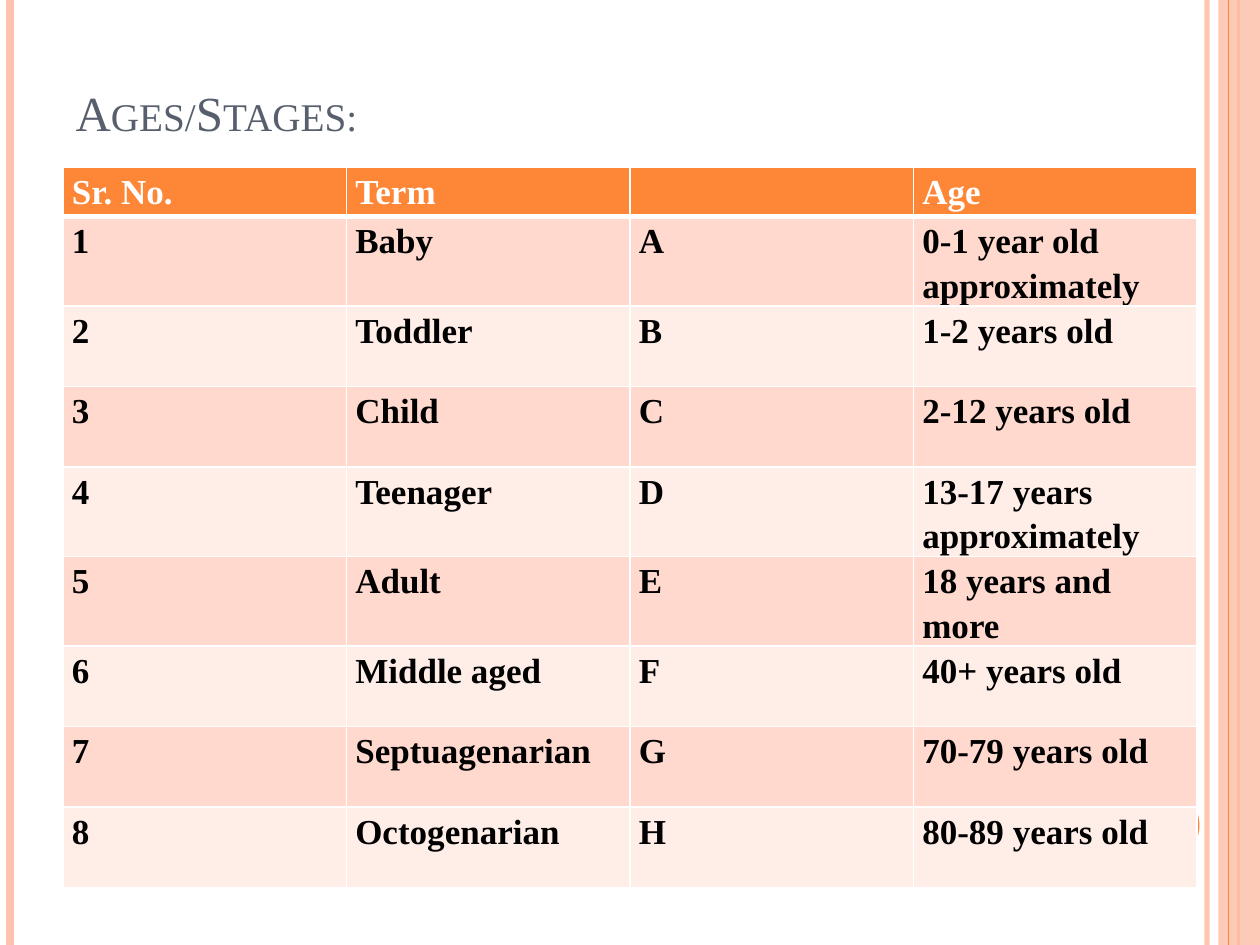
from lxml.etree import SubElement
from pptx import Presentation
from pptx.dml.color import RGBColor
from pptx.enum.shapes import MSO_CONNECTOR, MSO_SHAPE
from pptx.enum.text import MSO_ANCHOR, MSO_AUTO_SIZE, PP_ALIGN
from pptx.oxml.ns import qn
from pptx.util import Inches, Pt

COLORS = {
    "orange": "FE8637",
    "peach": "FEC3AE",
    "title": "575F6D",
    "white": "FFFFFF",
    "black": "000000",
    "band_dark": "FFD9CE",
    "band_light": "FFEDE8",
}
FONT = "Times New Roman"
HEADERS = ["Sr. No.", "Term", "", "Age"]
STAGES = [
    ("Baby", "0-1 year old approximately"),
    ("Toddler", "1-2 years old"),
    ("Child", "2-12 years old"),
    ("Teenager", "13-17 years  approximately"),
    ("Adult", "18 years and more"),
    ("Middle aged", "40+ years old"),
    ("Septuagenarian", "70-79 years old"),
    ("Octogenarian", "80-89 years old"),
]


def rgb(name):
    return RGBColor.from_string(COLORS[name])


def set_opacity(element, percent):
    color = next(element.iter(qn("a:srgbClr")))
    SubElement(color, qn("a:alpha")).set("val", str(percent * 1000))


def write_text(text_frame, text, size, color, bold=False, small_caps=False, line_spacing=None):
    paragraph = text_frame.paragraphs[0]
    paragraph.alignment = PP_ALIGN.LEFT
    paragraph.line_spacing = line_spacing
    if not text:
        return
    run = paragraph.add_run()
    run.text = text
    run.font.name = FONT
    run.font.size = Pt(size)
    run.font.bold = bold
    run.font.color.rgb = rgb(color)
    if small_caps:
        run.font._element.set("cap", "small")


def add_vertical_line(slide, left, width, color, opacity=100):
    line = slide.shapes.add_connector(
        MSO_CONNECTOR.STRAIGHT, Inches(left), 0, Inches(left), Inches(7.5)
    )
    line.line.width = Pt(width)
    line.line.color.rgb = rgb(color)
    properties = line._element.spPr
    if opacity < 100:
        set_opacity(properties, opacity)
    SubElement(properties, qn("a:effectLst"))


def add_filled_shape(slide, kind, left, top, width, height, color, opacity=100):
    shape = slide.shapes.add_shape(
        kind, Inches(left), Inches(top), Inches(width), Inches(height)
    )
    shape.shadow.inherit = False
    shape.fill.solid()
    shape.fill.fore_color.rgb = rgb(color)
    shape.line.fill.background()
    if opacity < 100:
        set_opacity(shape._element.spPr, opacity)


def add_decoration(slide):
    add_vertical_line(slide, 9.58, 3, "peach", opacity=93)
    add_vertical_line(slide, 0.08, 4.5, "peach")
    add_vertical_line(slide, 9.83, 1.5, "orange")
    add_filled_shape(slide, MSO_SHAPE.RECTANGLE, 9.67, 0, 0.33, 7.5, "peach", opacity=87)
    add_vertical_line(slide, 9.75, 0.75, "orange")
    add_filled_shape(slide, MSO_SHAPE.OVAL, 8.92, 6.25, 0.6, 0.6, "orange")


def set_title(slide, text):
    title = slide.shapes.title
    title.left, title.top = Inches(0.5), Inches(0.3)
    title.width, title.height = Inches(9), Inches(0.87)
    title.text_frame.auto_size = MSO_AUTO_SIZE.NONE
    title.text_frame.vertical_anchor = MSO_ANCHOR.BOTTOM
    write_text(title.text_frame, text, size=28, color="title", small_caps=True)


def set_borders(cell, top=1, bottom=1):
    properties = cell._tc.get_or_add_tcPr()
    for side, width in (("L", 1), ("R", 1), ("T", top), ("B", bottom)):
        border = SubElement(properties, qn(f"a:ln{side}"), w=str(Pt(width)))
        fill = SubElement(border, qn("a:solidFill"))
        SubElement(fill, qn("a:srgbClr"), val=COLORS["white"])


def format_cell(cell, text, row_index):
    header = row_index == 0
    band = "band_dark" if row_index % 2 else "band_light"
    cell.margin_left = cell.margin_right = Inches(0.07)
    cell.margin_top = cell.margin_bottom = 0
    set_borders(cell, top=3 if row_index == 1 else 1, bottom=3 if header else 1)
    cell.fill.solid()
    cell.fill.fore_color.rgb = rgb("orange" if header else band)
    write_text(cell.text_frame, text, size=20, color="white" if header else "black",
               bold=True, line_spacing=1.15)


def add_stage_table(slide):
    rows = [HEADERS] + [
        (str(number), term, chr(ord("A") + number - 1), age)
        for number, (term, age) in enumerate(STAGES, start=1)
    ]
    table = slide.shapes.add_table(
        len(rows), len(HEADERS), Inches(0.5), Inches(1.33), Inches(9), Inches(5.51)
    ).table
    for row_index, values in enumerate(rows):
        table.rows[row_index].height = Inches(0.64 if row_index else 0.39)
        for column_index, text in enumerate(values):
            format_cell(table.cell(row_index, column_index), text, row_index)


def main():
    presentation = Presentation()
    presentation.slide_width = Inches(10)
    presentation.slide_height = Inches(7.5)
    slide = presentation.slides.add_slide(presentation.slide_layouts[5])
    add_decoration(slide)
    set_title(slide, "Ages/Stages:")
    add_stage_table(slide)
    presentation.save("out.pptx")


if __name__ == "__main__":
    main()
